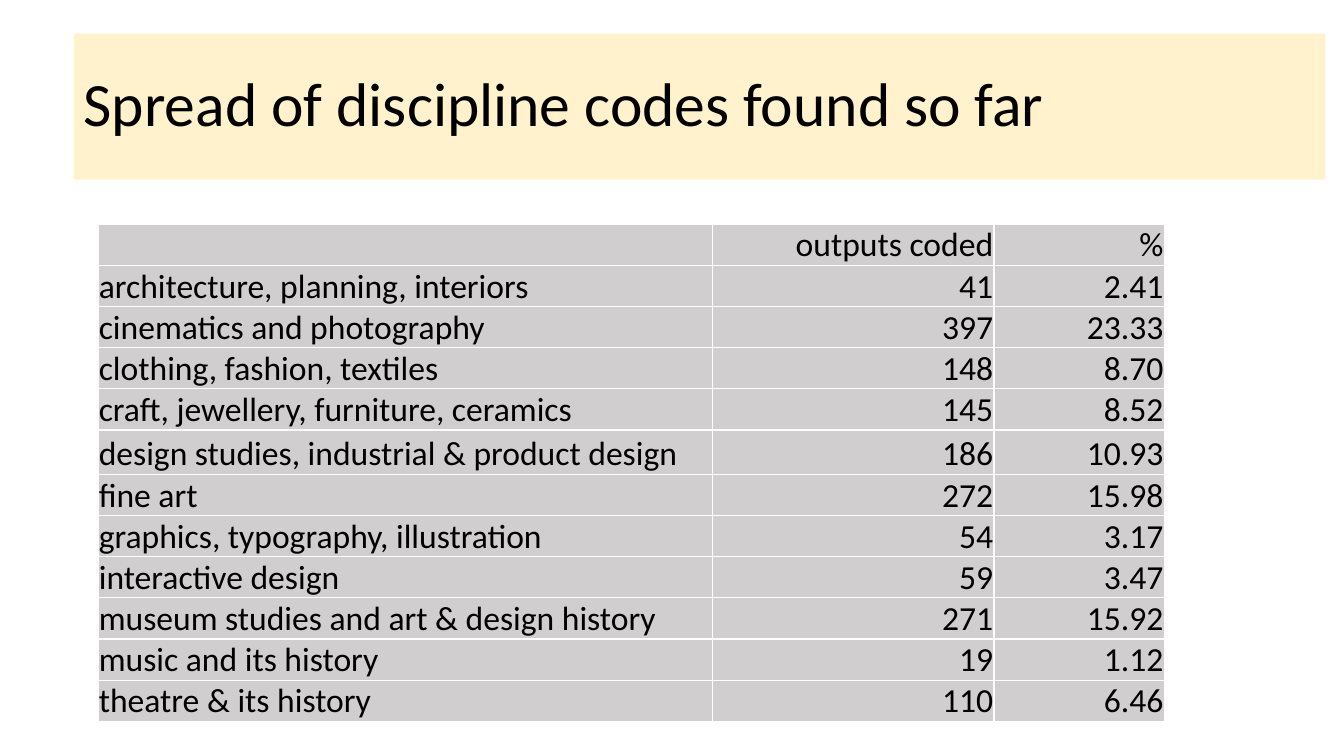
from lxml import etree
from pptx import Presentation
from pptx.dml.color import RGBColor
from pptx.enum.text import MSO_ANCHOR, PP_ALIGN
from pptx.oxml.ns import qn
from pptx.util import Cm, Pt

MIDDLE, BOTTOM = MSO_ANCHOR.MIDDLE, MSO_ANCHOR.BOTTOM
LEFT, RIGHT = PP_ALIGN.LEFT, PP_ALIGN.RIGHT
FONT = "Calibri"
COLORS = {"banner": "FFF2CC", "cell": "D0CECE", "border": "FFFFFF", "text": "000000"}

DISCIPLINES = [
    ("", "outputs coded", "%"),
    ("architecture, planning, interiors", "41", "2.41"),
    ("cinematics and photography", "397", "23.33"),
    ("clothing, fashion, textiles", "148", "8.70"),
    ("craft, jewellery, furniture, ceramics", "145", "8.52"),
    ("design studies, industrial & product design", "186", "10.93"),
    ("fine art", "272", "15.98"),
    ("graphics, typography, illustration", "54", "3.17"),
    ("interactive design", "59", "3.47"),
    ("museum studies and art & design history", "271", "15.92"),
    ("music and its history", "19", "1.12"),
    ("theatre & its history", "110", "6.46"),
]
COLUMN_WIDTHS = [15.49, 7.09, 4.29]
ROW_HEIGHT, TALL_ROW_HEIGHT, TALL_ROW = 0.94, 1.12, 5


def style_text(paragraph, size):
    paragraph.font.name = FONT
    paragraph.font.size = Pt(size)
    paragraph.font.color.rgb = RGBColor.from_string(COLORS["text"])


def add_borders(cell):
    properties = cell._tc.get_or_add_tcPr()
    for position, side in enumerate(("lnL", "lnR", "lnT", "lnB")):
        line = etree.Element(qn(f"a:{side}"), w=str(Pt(1)))
        fill = etree.SubElement(line, qn("a:solidFill"))
        etree.SubElement(fill, qn("a:srgbClr"), val=COLORS["border"])
        properties.insert(position, line)


prs = Presentation()
prs.slide_width, prs.slide_height = Cm(33.87), Cm(19.05)
slide = prs.slides.add_slide(prs.slide_layouts[6])

title = slide.shapes.add_textbox(Cm(1.86), Cm(0.85), Cm(31.54), Cm(3.68))
title.fill.solid()
title.fill.fore_color.rgb = RGBColor.from_string(COLORS["banner"])
title.text_frame.word_wrap = True
title.text_frame.vertical_anchor = MIDDLE
heading = title.text_frame.paragraphs[0]
heading.text = "Spread of discipline codes found so far"
heading.line_spacing = 0.9
style_text(heading, 44)

spread_frame = slide.shapes.add_table(
    len(DISCIPLINES), len(COLUMN_WIDTHS),
    Cm(2.47), Cm(5.65), Cm(sum(COLUMN_WIDTHS)), Cm(12.57),
)
spread = spread_frame.table
for column, width in zip(spread.columns, COLUMN_WIDTHS):
    column.width = Cm(width)

for row_index, values in enumerate(DISCIPLINES):
    height = TALL_ROW_HEIGHT if row_index == TALL_ROW else ROW_HEIGHT
    spread.rows[row_index].height = Cm(height)
    for column_index, value in enumerate(values):
        cell = spread.cell(row_index, column_index)
        cell.fill.solid()
        cell.fill.fore_color.rgb = RGBColor.from_string(COLORS["cell"])
        cell.vertical_anchor = BOTTOM
        cell.margin_left = cell.margin_right = cell.margin_top = Cm(0.02)
        cell.margin_bottom = 0
        add_borders(cell)
        entry = cell.text_frame.paragraphs[0]
        if value:
            entry.text = value
        entry.alignment = RIGHT if column_index else LEFT
        style_text(entry, 24)
        entry.font.bold = False

spread_frame.height = Cm(12.57)

prs.save("out.pptx")
